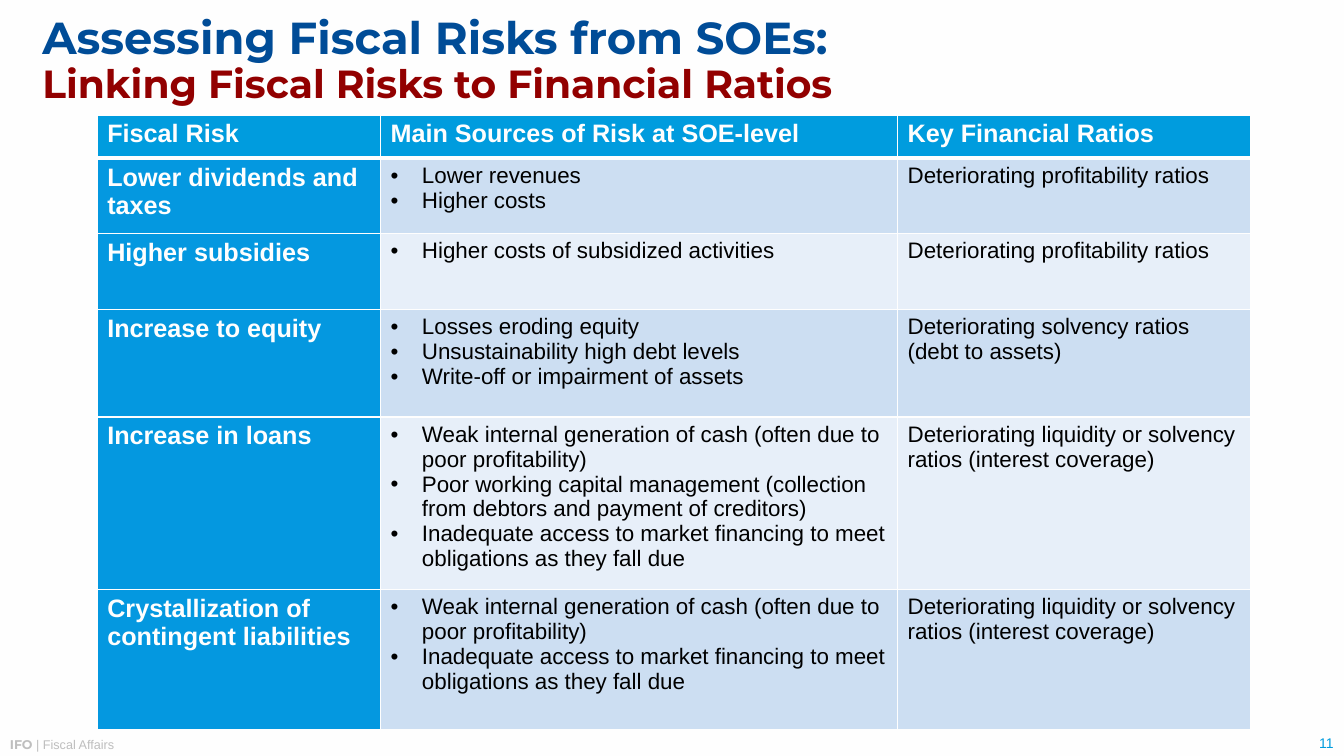
from dataclasses import dataclass

from lxml import etree
from pptx import Presentation
from pptx import util as u
from pptx.dml.color import RGBColor
from pptx.enum import text
from pptx.oxml.ns import qn


@dataclass(frozen=True)
class Theme:
    heading_font: str = "Montserrat"
    body_font: str = "Arial"
    paper: str = "FEFEFE"
    ink: str = "000000"
    navy: str = "004C97"
    maroon: str = "920000"
    header_fill: str = "009CDE"
    label_fill: str = "0498E0"
    bands: tuple = ("CCDEF2", "E7EFF9")
    grey: str = "BEBEBE"
    title_size: int = 32
    subtitle_size: int = 28
    label_size: int = 18
    body_size: int = 16
    number_size: int = 10
    footer_size: int = 9


HEADERS = ["Fiscal Risk", "Main Sources of Risk at SOE-level", "Key Financial Ratios"]
WEAK_CASH = "Weak internal generation of cash (often due to poor profitability)"
NO_FINANCING = "Inadequate access to market financing to meet obligations as they fall due"
PROFITABILITY = "Deteriorating profitability ratios"
LIQUIDITY = "Deteriorating liquidity or solvency ratios (interest coverage)"
RISKS = [
    ("Lower dividends and taxes", ["Lower revenues", "Higher costs"], PROFITABILITY),
    ("Higher subsidies", ["Higher costs of subsidized activities"], PROFITABILITY),
    ("Increase to equity",
     ["Losses eroding equity", "Unsustainability high debt levels",
      "Write-off or impairment of assets"],
     "Deteriorating solvency ratios (debt to assets)"),
    ("Increase in loans",
     [WEAK_CASH,
      "Poor working capital management (collection from debtors and payment of creditors)",
      NO_FINANCING],
     LIQUIDITY),
    ("Crystallization of contingent liabilities", [WEAK_CASH, NO_FINANCING], LIQUIDITY),
]
COLUMN_WIDTHS = [7.14, 13.03, 8.89]
ROW_HEIGHTS = [1.09, 1.9, 1.9, 2.72, 4.34, 3.53]


class RiskPage:
    def __init__(self, deck, theme):
        self.theme = theme
        self.page = deck.slides.add_slide(deck.slide_layouts[5])
        self.fill(self.page.background, theme.paper)

    def fill(self, target, color):
        target.fill.solid()
        target.fill.fore_color.rgb = RGBColor.from_string(color)

    def style(self, font, size, color, bold=False, name=None):
        font.name = name or self.theme.body_font
        font.size = u.Pt(size)
        font.bold = bold
        font.color.rgb = RGBColor.from_string(color)

    def title(self, heading, subheading, left, top, width, height):
        theme = self.theme
        box = self.page.shapes.title
        box.left, box.top, box.width, box.height = map(u.Cm, (left, top, width, height))
        frame = box.text_frame
        frame.margin_left = frame.margin_right = frame.margin_top = frame.margin_bottom = 0
        frame.vertical_anchor = text.MSO_ANCHOR.MIDDLE
        frame.auto_size = text.MSO_AUTO_SIZE.NONE
        para = frame.paragraphs[0]
        para.alignment = text.PP_ALIGN.LEFT
        para.line_spacing = 0.9
        span = para.add_run()
        span.text = heading
        self.style(span.font, theme.title_size, theme.navy, True, theme.heading_font)
        para.add_line_break()
        span = para.add_run()
        span.text = subheading
        self.style(span.font, theme.subtitle_size, theme.maroon, True, theme.heading_font)

    def text_box(self, left, top, width, height):
        """Add a wrapping text box and return its first paragraph."""
        box = self.page.shapes.add_textbox(*map(u.Cm, (left, top, width, height)))
        box.text_frame.word_wrap = True
        box.text_frame.vertical_anchor = text.MSO_ANCHOR.BOTTOM
        return box.text_frame.paragraphs[0]

    def footer(self, owner, department):
        theme = self.theme
        para = self.text_box(0, 18.44, 25.4, 0.63)
        for words, bold, name in ((owner, True, theme.heading_font),
                                  (department, False, theme.body_font)):
            span = para.add_run()
            span.text = words
            self.style(span.font, theme.footer_size, theme.grey, bold, name)

    def page_number(self, number):
        para = self.text_box(30.51, 18.39, 3.35, 0.68)
        para.text = number
        para.alignment = text.PP_ALIGN.RIGHT
        self.style(para.font, self.theme.number_size, self.theme.header_fill)

    def borders(self, cell, **widths):
        """Draw cell borders, given as side=points."""
        properties = cell._tc.get_or_add_tcPr()
        for side, width in widths.items():
            line = etree.SubElement(properties, qn(f"a:ln{side}"), w=str(u.Pt(width)))
            solid = etree.SubElement(line, qn("a:solidFill"))
            etree.SubElement(solid, qn("a:srgbClr"), val=self.theme.paper)

    def bullet(self, para):
        properties = para._p.get_or_add_pPr()
        indent = u.Cm(0.79)
        properties.set("marL", str(indent))
        properties.set("indent", str(-indent))
        etree.SubElement(properties, qn("a:buFont"), typeface=self.theme.body_font)
        etree.SubElement(properties, qn("a:buChar"), char="•")

    def cell(self, cell, content, fill, row, is_label):
        theme = self.theme
        self.borders(cell, L=1, R=1, T=3 if row == 1 else 1, B=3 if row == 0 else 1)
        self.fill(cell, fill)
        bulleted = isinstance(content, list)
        cell.text = "\n".join(content) if bulleted else content
        for para in cell.text_frame.paragraphs:
            if bulleted:
                self.bullet(para)
            if is_label:
                self.style(para.font, theme.label_size, theme.paper, True)
            else:
                self.style(para.font, theme.body_size, theme.ink)

    def table(self, rows, left, top, widths, heights):
        theme = self.theme
        table = self.page.shapes.add_table(
            len(rows), len(widths),
            *map(u.Cm, (left, top, sum(widths), sum(heights)))).table
        table.first_col = True
        for column, width in zip(table.columns, widths):
            column.width = u.Cm(width)
        for row, (contents, height) in enumerate(zip(rows, heights)):
            table.rows[row].height = u.Cm(height)
            for column, content in enumerate(contents):
                if row == 0:
                    fill = theme.header_fill
                elif column == 0:
                    fill = theme.label_fill
                else:
                    fill = theme.bands[(row - 1) % 2]
                self.cell(table.cell(row, column), content, fill, row, row == 0 or column == 0)


def main():
    deck = Presentation()
    deck.slide_width, deck.slide_height = u.Cm(33.87), u.Cm(19.05)
    page = RiskPage(deck, Theme())
    page.footer("IFO ", "| Fiscal Affairs")
    page.page_number("11")
    page.title("Assessing Fiscal Risks from SOEs: ", "Linking Fiscal Risks to Financial Ratios",
               1.07, 0.18, 26.97, 2.72)
    page.table([HEADERS, *RISKS], 2.45, 2.9, COLUMN_WIDTHS, ROW_HEIGHTS)
    deck.save("out.pptx")


if __name__ == "__main__":
    main()
